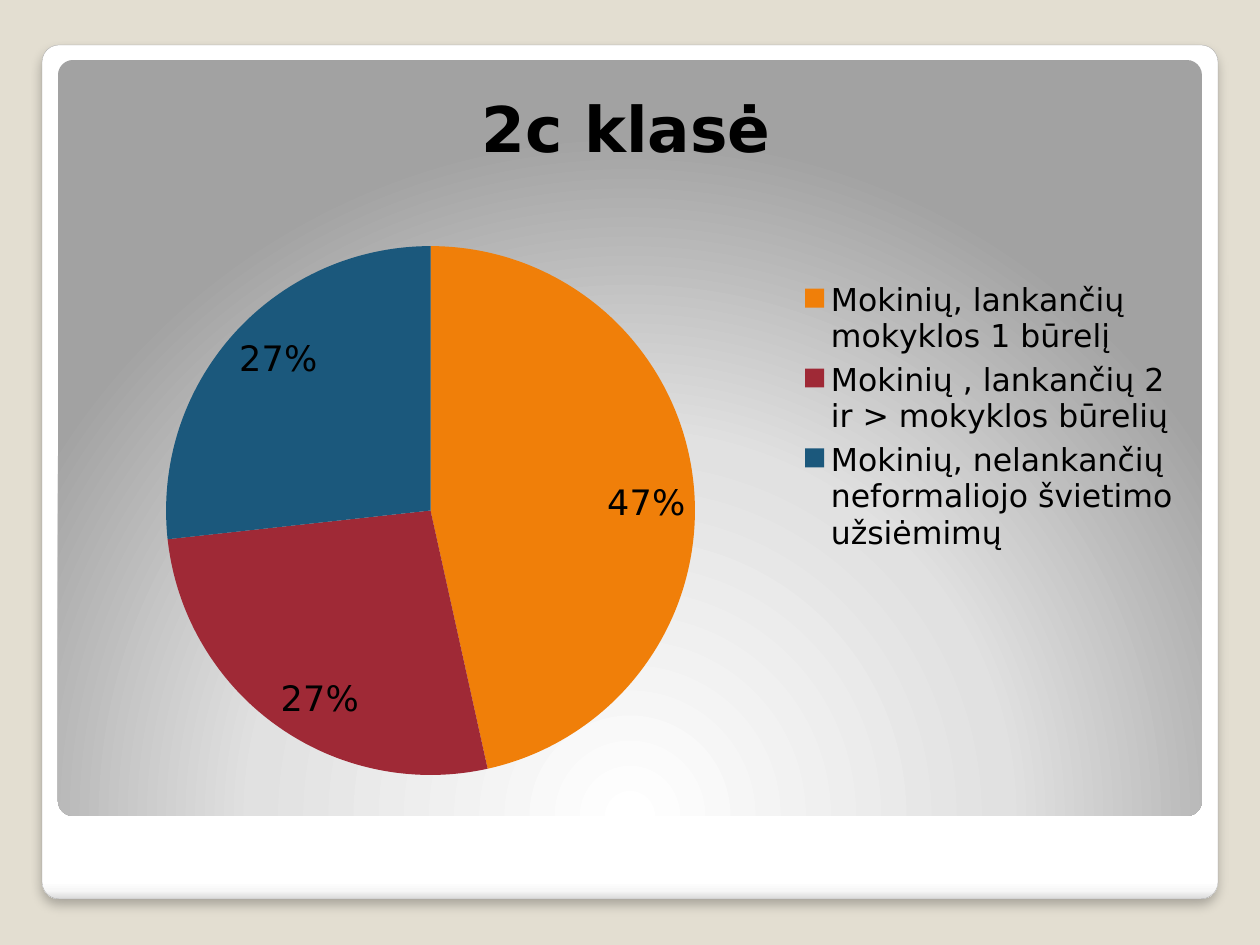
from lxml.etree import SubElement
from pptx import Presentation
from pptx.chart.data import CategoryChartData
from pptx.dml.color import RGBColor
from pptx.enum.chart import XL_CHART_TYPE as ChartType
from pptx.enum.chart import XL_LABEL_POSITION as LabelPos
from pptx.enum.chart import XL_LEGEND_POSITION as LegendPos
from pptx.enum.shapes import MSO_SHAPE as Shape
from pptx.oxml.ns import qn
from pptx.util import Emu, Pt

PX = 914400 / 126
FONT = "DejaVu Sans"
BLACK = RGBColor(0x00, 0x00, 0x00)
WHITE = RGBColor(0xFF, 0xFF, 0xFF)
BEIGE = RGBColor(0xE3, 0xDE, 0xD1)
EDGE = RGBColor(0xA4, 0xA4, 0xA4)
FRAME_STOPS = [(0, WHITE), (98, WHITE), (99, RGBColor(0xF7, 0xF7, 0xF7)),
               (100, RGBColor(0xDA, 0xDA, 0xDA))]
PANEL_STOPS = [(0, WHITE), (55, RGBColor(0xE1, 0xE1, 0xE1)),
               (100, RGBColor(0xA2, 0xA2, 0xA2))]
GROUPS = [
    ("Mokinių, lankančių mokyklos 1 būrelį", 47, RGBColor(0xF0, 0x7F, 0x09)),
    ("Mokinių , lankančių 2 ir > mokyklos būrelių", 27, RGBColor(0x9F, 0x29, 0x36)),
    ("Mokinių, nelankančių neformaliojo švietimo užsiėmimų", 27,
     RGBColor(0x1B, 0x58, 0x7C)),
]


def px(n):
    return Emu(round(n * PX))


def format_font(font, size, bold=False, color=BLACK):
    font.name, font.size, font.bold = FONT, Pt(size), bold
    font.color.rgb = color


def add_text(p, text, **fmt):
    r = p.add_run()
    r.text = text
    format_font(r.font, **fmt)


def add_color(parent, color):
    return SubElement(parent, qn("a:srgbClr"), val=str(color))


def set_gradient(s, stops, focus=None):
    """Fill with percent stops, downwards or in circles around a focus (l, t, r, b)."""
    s.fill.gradient()
    grad = s._element.spPr.find(qn("a:gradFill"))
    for child in list(grad):
        grad.remove(child)
    gs_list = SubElement(grad, qn("a:gsLst"))
    for pos, color in stops:
        add_color(SubElement(gs_list, qn("a:gs"), pos=str(pos * 1000)), color)
    if focus:
        path = SubElement(grad, qn("a:path"), path="circle")
        sides = {side: str(v * 1000) for side, v in zip("ltrb", focus)}
        SubElement(path, qn("a:fillToRect"), **sides)
    else:
        SubElement(grad, qn("a:lin"), ang="5400000", scaled="0")


def add_panel(slide, x, y, w, h, stops, focus=None):
    s = slide.shapes.add_shape(Shape.ROUNDED_RECTANGLE, px(x), px(y), px(w), px(h))
    s.adjustments[0] = 0.02
    s.shadow.inherit = False
    s.line.fill.background()
    set_gradient(s, stops, focus)
    return s


def add_edge_and_shadow(s):
    s.line.color.rgb = EDGE
    s.line.width = Pt(0.16)
    effects = s._element.spPr.find(qn("a:effectLst"))
    shadow = SubElement(effects, qn("a:outerShdw"), blurRad=str(Pt(6)),
                        dist=str(Pt(4)), dir="5400000", rotWithShape="0")
    SubElement(add_color(shadow, BLACK), qn("a:alpha"), val="25000")


def set_layout(element, inner=False, **fractions):
    """Place a chart part by fractions (x, y, w, h) of the chart area."""
    layout = element.find(qn("c:layout"))
    if layout is None:
        layout = SubElement(element, qn("c:layout"))
        before = element.find(qn("c:overlay"))
        if before is not None:
            before.addprevious(layout)
        else:
            element.insert(0, layout)
    manual = SubElement(layout, qn("c:manualLayout"))
    if inner:
        SubElement(manual, qn("c:layoutTarget"), val="inner")
    for side in "xy":
        SubElement(manual, qn(f"c:{side}Mode"), val="edge")
    for name, value in fractions.items():
        SubElement(manual, qn(f"c:{name}"), val=str(value))


def add_pie(slide, x, y, w, h):
    data = CategoryChartData()
    data.categories = [name for name, _, _ in GROUPS]
    data.add_series("Series 1", [value for _, value, _ in GROUPS])
    chart = slide.shapes.add_chart(ChartType.PIE, px(x), px(y), px(w), px(h), data).chart
    format_font(chart.font, 10)

    chart.has_title = True
    add_text(chart.chart_title.text_frame.paragraphs[0], "2c klasė", size=36, bold=True)
    chart.chart_title.include_in_layout = False
    set_layout(chart.chart_title._element, x=0.36, y=0.04)

    chart.has_legend = True
    chart.legend.position = LegendPos.RIGHT
    chart.legend.include_in_layout = False
    format_font(chart.legend.font, 18)
    set_layout(chart.legend._element, x=0.65, y=0.31, w=0.34, h=0.38)

    plot = chart.plots[0]
    plot.vary_by_categories = True
    set_layout(plot._element.getparent(), inner=True, x=0.09, y=0.27, w=0.47, h=0.71)
    for i, (_, _, color) in enumerate(GROUPS):
        fill = plot.series[0].points[i].format.fill
        fill.solid()
        fill.fore_color.rgb = color

    plot.has_data_labels = True
    labels = plot.data_labels
    labels.show_percentage, labels.show_value = True, False
    labels.number_format, labels.number_format_is_linked = "0%", False
    labels.position = LabelPos.INSIDE_END
    format_font(labels.font, 20)


def main():
    prs = Presentation()
    prs.slide_width, prs.slide_height = px(1260), px(945)
    slide = prs.slides.add_slide(prs.slide_layouts[6])
    slide.background.fill.solid()
    slide.background.fill.fore_color.rgb = BEIGE
    add_edge_and_shadow(add_panel(slide, 42, 45, 1176, 854, FRAME_STOPS))
    add_panel(slide, 58, 60, 1144, 756, PANEL_STOPS, focus=(50, 175, 50, -75))
    add_pie(slide, 64, 45, 1128, 745)
    prs.save("out.pptx")


if __name__ == "__main__":
    main()
